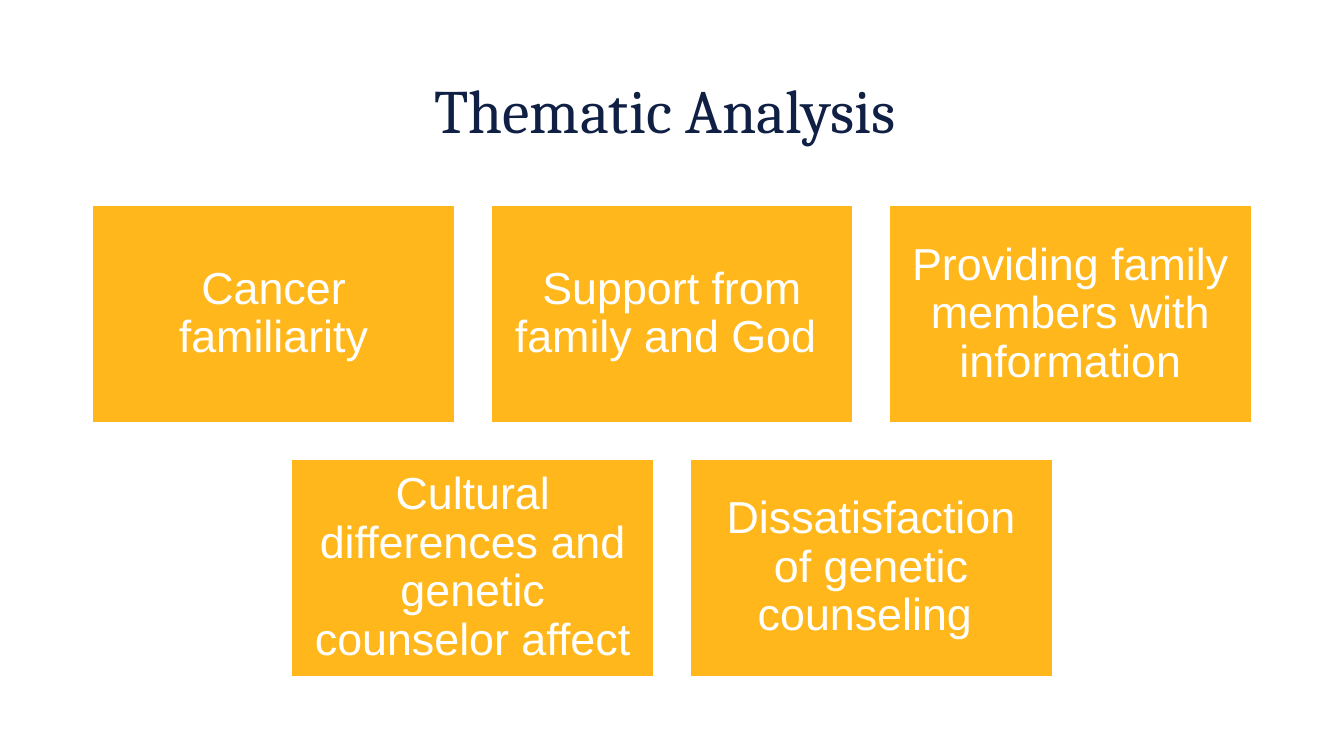
from pptx import Presentation
from pptx.dml.color import RGBColor
from pptx.enum.shapes import MSO_SHAPE
from pptx.enum.text import MSO_ANCHOR, PP_ALIGN
from pptx.util import Cm, Pt

RECT = MSO_SHAPE.RECTANGLE
MIDDLE = MSO_ANCHOR.MIDDLE
CENTER = PP_ALIGN.CENTER

TITLE = "Thematic Analysis "
THEMES = [
    [
        "Cancer familiarity",
        "Support from family and God ",
        "Providing family members with information",
    ],
    [
        "Cultural differences and genetic counselor affect",
        "Dissatisfaction of genetic counseling ",
    ],
]
COLORS = {"navy": "0F2044", "gold": "FFB71B", "white": "FFFFFF"}
FONTS = {
    "title": {"name": "Cambria", "size": Pt(44)},
    "theme": {"name": "Arial", "size": Pt(32)},
}
INSETS = {
    "margin_left": Cm(0.34),
    "margin_right": Cm(0.34),
    "margin_top": Cm(0.34),
    "margin_bottom": Cm(0.34),
}
WIDTH, HEIGHT = 33.87, 19.05
CARD_W, CARD_H, GAP = 9.13, 5.48, 0.91
TOP = 5.18


def color(name):
    return RGBColor.from_string(COLORS[name])


def apply(target, values):
    for key, value in values.items():
        setattr(target, key, value)


def write(shape, text, font, ink):
    frame = shape.text_frame
    apply(frame, {"word_wrap": True, "vertical_anchor": MIDDLE})
    para = frame.paragraphs[0]
    apply(para, {"alignment": CENTER, "line_spacing": 0.9})
    run = para.add_run()
    run.text = text
    apply(run.font, FONTS[font])
    run.font.color.rgb = color(ink)


def add_card(slide, text, left, top):
    card = slide.shapes.add_shape(RECT, Cm(left), Cm(top), Cm(CARD_W), Cm(CARD_H))
    card.shadow.inherit = False
    card.fill.solid()
    card.fill.fore_color.rgb = color("gold")
    card.line.color.rgb = color("white")
    card.line.width = Pt(1)
    apply(card.text_frame, INSETS)
    write(card, text, "theme", "white")


def main():
    deck = Presentation()
    apply(deck, {"slide_width": Cm(WIDTH), "slide_height": Cm(HEIGHT)})
    slide = deck.slides.add_slide(deck.slide_layouts[6])

    title = slide.shapes.add_textbox(Cm(2.33), Cm(1.01), Cm(29.21), Cm(3.68))
    write(title, TITLE, "title", "navy")

    for row, themes in enumerate(THEMES):
        span = len(themes) * (CARD_W + GAP) - GAP
        start = (WIDTH - span) / 2
        for col, theme in enumerate(themes):
            left = start + col * (CARD_W + GAP)
            add_card(slide, theme, left, TOP + row * (CARD_H + GAP))

    deck.save("out.pptx")


if __name__ == "__main__":
    main()
